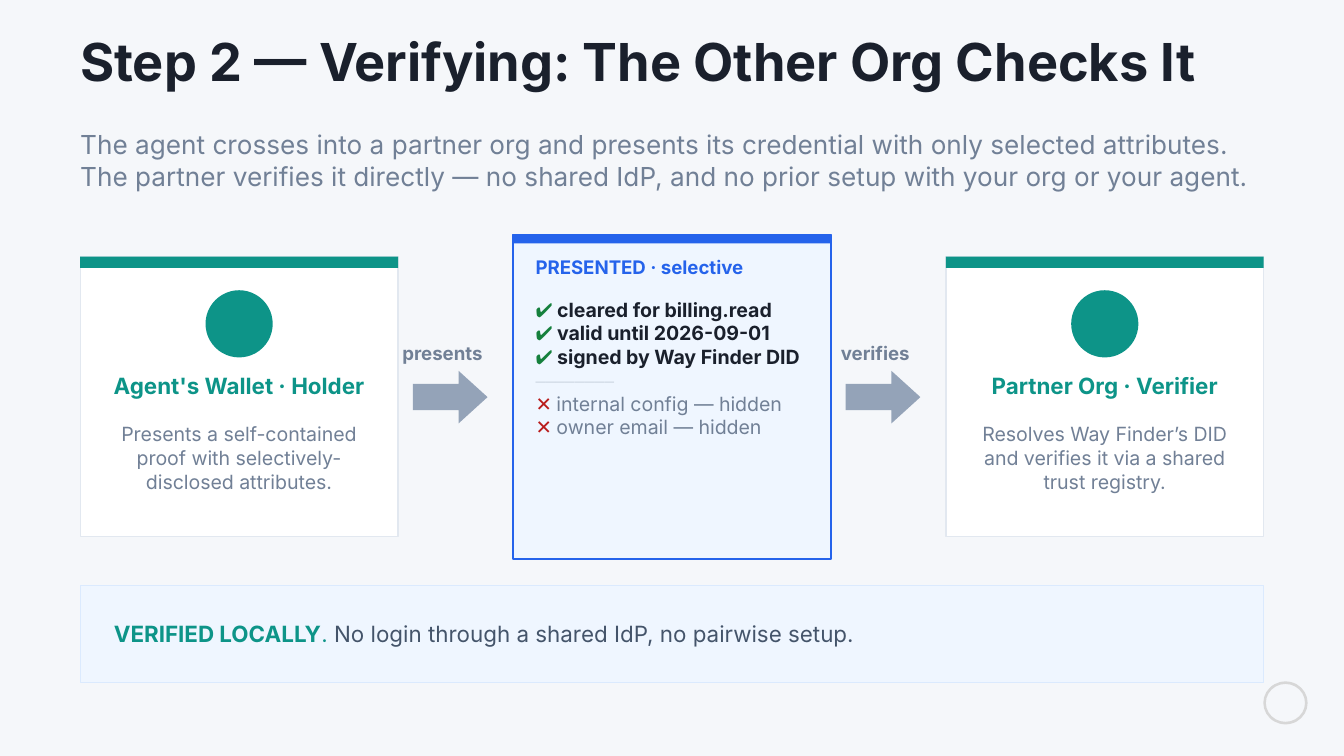
"""Build the slide on verifying a credential; lengths are cells of a 100-column grid."""
from collections import namedtuple

from pptx import Presentation, util as u
from pptx.dml.color import RGBColor
from pptx.enum import shapes as kinds, text as t

COLS, ROWS = 100, 56.25
CELL = u.Inches(10) / COLS
FONT = "Inter"
COLORS = {
    "page": "F5F7FA", "ink": "1A202C", "muted": "718096", "teal": "0D9488",
    "white": "FFFFFF", "edge": "E2E8F0", "blue": "2563EB", "pale": "EFF6FF",
    "pale_edge": "DBEAFE", "arrow": "94A3B8", "yes": "15803D", "no": "B91C1C",
    "rule": "CBD5E1", "body": "44546A", "badge": "D7D7D7",
}
Box = namedtuple("Box", "left top width height")
Run = namedtuple("Run", "words size color bold", defaults=(False,))


def color(name):
    """Return the named colour."""
    return RGBColor.from_string(COLORS[name])


def within(box, left, top, width, height):
    """Return a box placed relative to the corner of another."""
    return Box(box.left + left, box.top + top, width, height)


def emu(box):
    """Turn a box in grid cells into slide lengths."""
    return [u.Emu(round(cells * CELL)) for cells in box]


def add_shape(slide, kind, box, fill, edge=None, weight=0.75):
    """Add a flat preset shape."""
    shape = slide.shapes.add_shape(kind, *emu(box))
    shape.shadow.inherit = False
    shape.fill.solid()
    shape.fill.fore_color.rgb = color(fill)
    if edge:
        shape.line.color.rgb = color(edge)
        shape.line.width = u.Pt(weight)
    else:
        shape.line.fill.background()
    return shape


def add_text(slide, box, paragraphs, align=t.PP_ALIGN.LEFT, spacing=None,
             anchor=t.MSO_ANCHOR.TOP):
    """Add a wrapped text box without margins, run by run."""
    frame = slide.shapes.add_textbox(*emu(box)).text_frame
    frame.word_wrap = True
    frame.vertical_anchor = anchor
    frame.margin_left = frame.margin_top = frame.margin_right = frame.margin_bottom = 0
    for index, runs in enumerate(paragraphs):
        paragraph = frame.add_paragraph() if index else frame.paragraphs[0]
        paragraph.alignment = align
        if spacing:
            paragraph.line_spacing = spacing
        for part in runs:
            run = paragraph.add_run()
            run.text = part.words
            run.font.name = FONT
            run.font.size = u.Pt(part.size)
            run.font.bold = part.bold
            run.font.color.rgb = color(part.color)


def add_header(slide, box, title, summary):
    """Place the title and the summary under it."""
    add_text(slide, within(box, 0, 0, box.width, 5.6), [[Run(title, 28, "ink", True)]])
    add_text(slide, within(box, 0, 7.2, box.width, 4.2), [[Run(summary, 14, "muted")]],
             spacing=1.05)


def add_party(slide, box, role, action):
    """Place the card of one party: bar, disc, role and action."""
    disc, margin = 5, 1.4
    add_shape(slide, kinds.MSO_SHAPE.RECTANGLE, box, "white", "edge")
    add_shape(slide, kinds.MSO_SHAPE.RECTANGLE, within(box, 0, 0, box.width, 0.83), "teal")
    add_shape(slide, kinds.MSO_SHAPE.OVAL,
              within(box, (box.width - disc) / 2, 2.5, disc, disc), "teal")
    add_text(slide, within(box, 0, 8.6, box.width, 3.1),
             [[Run(role, 12, "teal", True)]], t.PP_ALIGN.CENTER)
    add_text(slide, within(box, margin, 12.2, box.width - 2 * margin, 7.8),
             [[Run(action, 10.5, "muted")]], t.PP_ALIGN.CENTER, 1.04)


def add_credential(slide, box, heading, shown, hidden):
    """Place the presented credential with its shown and hidden attributes."""
    margin, size = 1.67, 10.5
    width = box.width - 2 * margin
    add_shape(slide, kinds.MSO_SHAPE.RECTANGLE, box, "pale", "blue", 1)
    add_shape(slide, kinds.MSO_SHAPE.RECTANGLE, within(box, 0, 0, box.width, 0.67), "blue")
    add_text(slide, within(box, margin, 1.6, width, 2.5), [[Run(heading, 10, "blue", True)]])
    attributes = [[Run("✔ ", size, "yes", True), Run(item, size, "ink", True)]
                  for item in shown]
    attributes.append([Run("⎯⎯⎯⎯⎯⎯⎯⎯", size, "rule")])
    attributes += [[Run("✕ ", size, "no", True), Run(item, size, "muted")]
                   for item in hidden]
    add_text(slide, within(box, margin, 4.7, width, 17.8), attributes)


def add_step(slide, box, label):
    """Place a labelled arrow between two cards."""
    add_text(slide, within(box, 0, 0, box.width, 2.2),
             [[Run(label, 10, "muted", True)]], t.PP_ALIGN.CENTER)
    arrow = add_shape(slide, kinds.MSO_SHAPE.RIGHT_ARROW,
                      within(box, 1.4, 2.2, 5.56, 3.9), "arrow")
    arrow.adjustments[0], arrow.adjustments[1] = 0.5, 0.55


def add_takeaway(slide, box, lead, rest):
    """Place the closing band."""
    margin = 2.5
    add_shape(slide, kinds.MSO_SHAPE.RECTANGLE, box, "pale", "pale_edge")
    add_text(slide, within(box, margin, 0, box.width - 2 * margin, box.height),
             [[Run(lead, 12, "teal", True), Run(". ", 12, "teal"), Run(rest, 12, "body")]],
             anchor=t.MSO_ANCHOR.MIDDLE)


def add_badge(slide, box):
    """Place the plain corner ring."""
    ring = add_shape(slide, kinds.MSO_SHAPE.DONUT, box, "badge")
    ring.adjustments[0] = 0.06


def main():
    """Build and save the slide."""
    deck = Presentation()
    deck.slide_width, deck.slide_height = emu((COLS, ROWS))
    slide = deck.slides.add_slide(deck.slide_layouts[6])
    slide.background.fill.solid()
    slide.background.fill.fore_color.rgb = color("page")

    left, width, card = 5.97, 88.06, 23.65
    pitch = (width - card) / 2
    add_badge(slide, Box(94, 50.7, 3.3, 3.2))
    add_header(slide, Box(left, 2.2, width, 11.4),
               "Step 2 — Verifying: The Other Org Checks It",
               "The agent crosses into a partner org and presents its credential with "
               "only selected attributes. The partner verifies it directly — no shared "
               "IdP, and no prior setup with your org or your agent.")
    parties = [
        ("Agent's Wallet · Holder",
         "Presents a self-contained proof with selectively-disclosed attributes."),
        ("Partner Org · Verifier",
         "Resolves Way Finder’s DID and verifies it via a shared trust registry."),
    ]
    for index, (role, action) in enumerate(parties):
        add_party(slide, Box(left + 2 * index * pitch, 19.1, card, 20.85), role, action)
    add_credential(slide, Box(left + pitch, 17.45, card, 24.15), "PRESENTED · selective",
                   ["cleared for billing.read", "valid until 2026-09-01",
                    "signed by Way Finder DID"],
                   ["internal config — hidden", "owner email — hidden"])
    for index, label in enumerate(["presents", "verifies"]):
        add_step(slide, Box(left + card - 0.3 + index * pitch, 25.4, 7.2, 6.1), label)
    add_takeaway(slide, Box(left, 43.55, width, 7.25), "VERIFIED LOCALLY",
                 "No login through a shared IdP, no pairwise setup.")
    deck.save("out.pptx")


if __name__ == "__main__":
    main()
